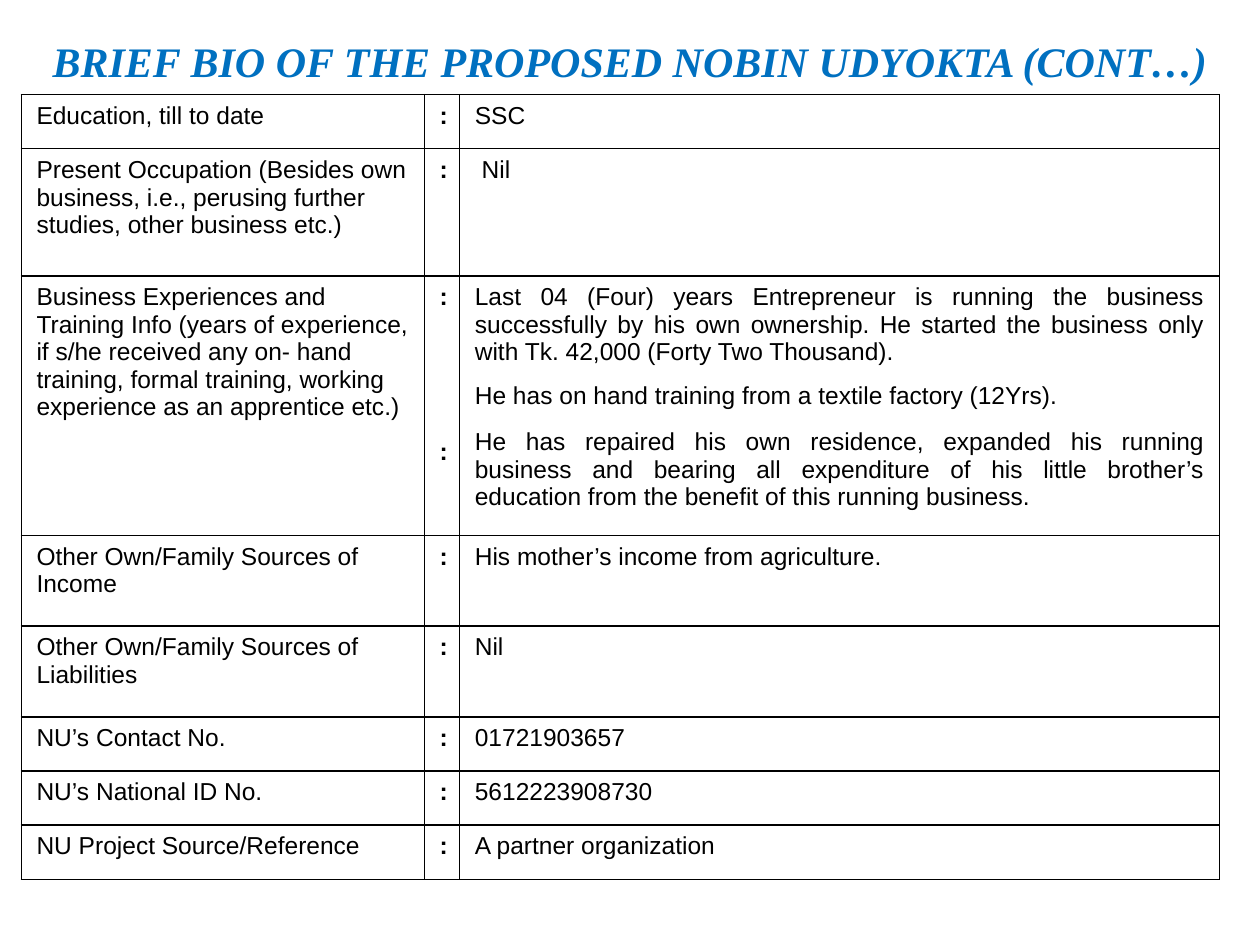
from lxml import etree
from pptx import Presentation
from pptx.dml.color import RGBColor
from pptx.enum.text import MSO_ANCHOR, PP_ALIGN
from pptx.oxml.ns import qn
from pptx.util import Inches, Pt

CENTER, JUSTIFY, LEFT = PP_ALIGN.CENTER, PP_ALIGN.JUSTIFY, PP_ALIGN.LEFT
MIDDLE, TOP = MSO_ANCHOR.MIDDLE, MSO_ANCHOR.TOP

BLACK, BLUE = "000000", "0070C0"
COLUMN_WIDTHS = (3.2, 0.27, 6.03)

COLON = [(":", 0)]
BIO_ROWS = [
    (0.43, "Education, till to date", COLON, [("SSC", 0)], LEFT),
    (1.01, "Present Occupation (Besides own business, i.e., perusing further "
           "studies, other business etc.)", COLON, [(" Nil", 0)], LEFT),
    (2.06, "Business Experiences and Training Info (years of experience, if s/he "
           "received any on- hand training, formal training, working experience as "
           "an apprentice etc.)",
     [(":", 0), (":", 73)],
     [("Last 04 (Four) years Entrepreneur is running the business successfully by "
       "his own ownership. He started the business only with Tk. 42,000 (Forty Two "
       "Thousand).", 0),
      ("He has on hand training from a textile factory (12Yrs).", 9.4),
      ("He has repaired his own residence, expanded his running business and "
       "bearing all expenditure of his little brother’s education from the benefit "
       "of this running business.", 10.5)], JUSTIFY),
    (0.72, "Other Own/Family Sources of Income", COLON,
     [("His mother’s income from agriculture.", 0)], JUSTIFY),
    (0.72, "Other Own/Family Sources of Liabilities", COLON, [("Nil", 0)], LEFT),
    (0.43, "NU’s Contact No.", COLON, [("01721903657", 0)], LEFT),
    (0.43, "NU’s National ID No.", COLON, [("5612223908730", 0)], LEFT),
    (0.43, "NU Project Source/Reference", COLON, [("A partner organization", 0)], LEFT),
]


def color(hex_string):
    """Return the colour for a hex string."""
    return RGBColor.from_string(hex_string)


def style_font(font, name, size, hex_string, bold=False, italic=False):
    """Set every property of a font."""
    font.name, font.size = name, Pt(size)
    font.bold, font.italic = bold, italic
    font.color.rgb = color(hex_string)


def add_borders(cell, hex_string, width):
    """Draw a solid border on the four sides of a cell."""
    properties = cell._tc.get_or_add_tcPr()
    for side in ("a:lnL", "a:lnR", "a:lnT", "a:lnB"):
        border = etree.SubElement(properties, qn(side), w=str(Pt(width)))
        solid = etree.SubElement(border, qn("a:solidFill"))
        etree.SubElement(solid, qn("a:srgbClr"), val=hex_string)


def fill_cell(cell, entries, alignment=LEFT, bold=False):
    """Write spaced paragraphs into a bordered cell without fill."""
    cell.margin_left = cell.margin_right = Inches(0.12)
    cell.margin_top = cell.margin_bottom = Inches(0.06)
    cell.vertical_anchor = TOP
    add_borders(cell, BLACK, 1)
    cell.fill.background()
    frame = cell.text_frame
    for index, (text, space) in enumerate(entries):
        paragraph = frame.add_paragraph() if index else frame.paragraphs[0]
        paragraph.text = text
        paragraph.alignment = alignment
        if space:
            paragraph.space_before = Pt(space)
        style_font(paragraph.font, "Arial", 14, BLACK, bold)


def add_title(slide, left, top, width, height):
    """Place the slide heading in the given box."""
    heading = slide.shapes.add_textbox(left, top, width, height).text_frame
    heading.word_wrap = True
    heading.vertical_anchor = MIDDLE
    paragraph = heading.paragraphs[0]
    paragraph.text = "BRIEF BIO OF THE PROPOSED NOBIN UDYOKTA (CONT…)"
    paragraph.alignment = CENTER
    style_font(paragraph.font, "Times New Roman", 24, BLUE, True, True)


def add_bio_table(slide, left, top, width, height):
    """Place the table of biographical details in the given box."""
    bio = slide.shapes.add_table(
        len(BIO_ROWS), len(COLUMN_WIDTHS), left, top, width, height).table
    bio.first_row = bio.horz_banding = False
    for column, share in zip(bio.columns, COLUMN_WIDTHS):
        column.width = int(width * share / sum(COLUMN_WIDTHS))
    for row, (row_height, label, colons, answers, alignment) in zip(bio.rows, BIO_ROWS):
        row.height = Inches(row_height)
        label_cell, colon_cell, answer_cell = row.cells
        fill_cell(label_cell, [(label, 0)])
        fill_cell(colon_cell, colons, bold=True)
        fill_cell(answer_cell, answers, alignment)


def main():
    """Build and save the slide."""
    deck = Presentation()
    deck.slide_width, deck.slide_height = Inches(10), Inches(7.5)
    slide = deck.slides.add_slide(deck.slide_layouts[6])
    add_bio_table(slide, Inches(0.17), Inches(0.75), Inches(9.5), Inches(6.23))
    add_title(slide, Inches(0), Inches(0.24), Inches(10), Inches(0.48))
    deck.save("out.pptx")


if __name__ == "__main__":
    main()
